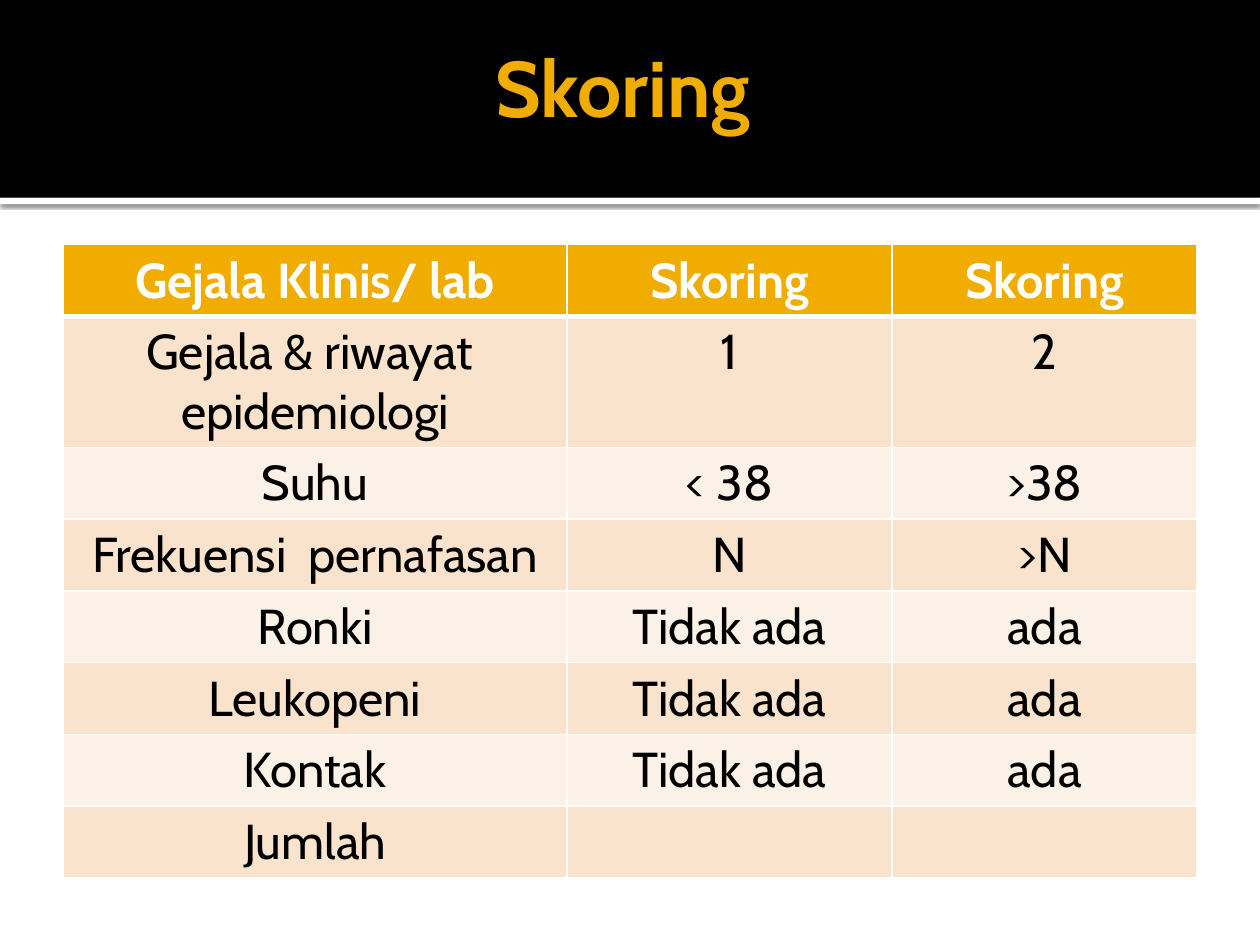
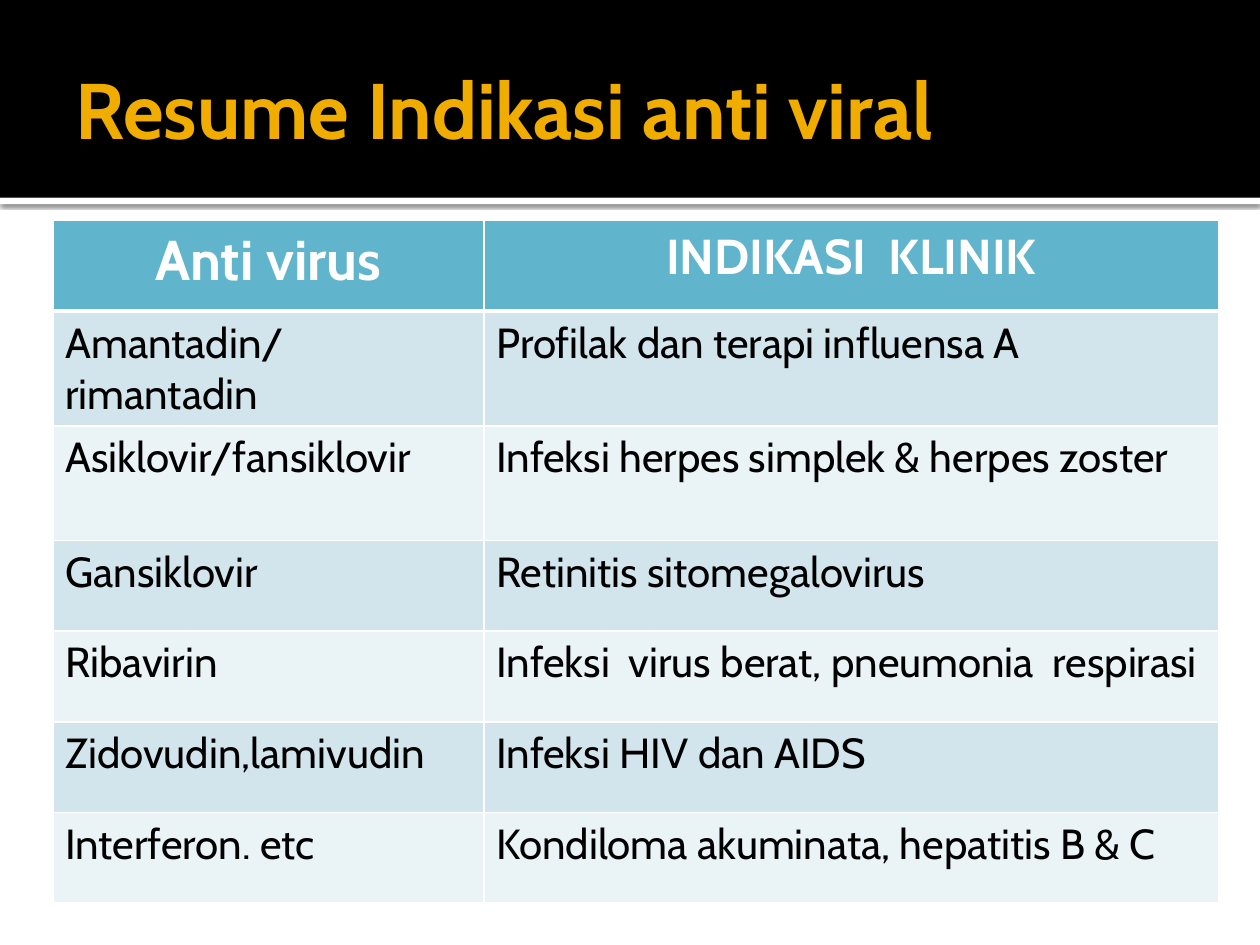
from lxml import etree
from pptx import Presentation
from pptx.dml.color import RGBColor
from pptx.enum import shapes, text
from pptx.oxml import parse_xml
from pptx.oxml.ns import nsdecls, qn
from pptx.util import Inches, Pt

FONT = "Cabin"
WHITE, BLACK, GOLD = "FFFFFF", "000000", "F0AD00"
ORANGE_STYLE = (GOLD, "F9E3CC", "FCF1E7")  # header, odd rows, even rows
BLUE_STYLE = ("60B5CC", "D2E5EC", "EAF3F6")
LEFT, CENTER = text.PP_ALIGN.LEFT, text.PP_ALIGN.CENTER

SCORING = [
    ("Gejala Klinis/ lab", "Skoring", "Skoring"),
    ("Gejala & riwayat  epidemiologi", "1", "2"),
    ("Suhu", "< 38", ">38"),
    ("Frekuensi  pernafasan", "N", ">N"),
    ("Ronki", "Tidak ada", "ada"),
    ("Leukopeni", "Tidak ada", "ada"),
    ("Kontak", "Tidak ada", "ada"),
    ("Jumlah", "", ""),
]
ANTIVIRALS = [
    ("Anti virus", "INDIKASI  KLINIK"),
    ("Amantadin/rimantadin", "Profilak dan terapi influensa A"),
    ("Asiklovir/fansiklovir", "Infeksi herpes simplek & herpes zoster"),
    ("Gansiklovir", "Retinitis sitomegalovirus"),
    ("Ribavirin", "Infeksi  virus berat, pneumonia  respirasi"),
    ("Zidovudin,lamivudin", "Infeksi HIV dan AIDS"),
    ("Interferon. etc", "Kondiloma akuminata, hepatitis B & C"),
]


def rgb(value):
    return RGBColor.from_string(value)


def inches(box):
    return [Inches(v) for v in box]


def add_run(p, words, size, color, bold=False):
    r = p.add_run()
    r.text = words
    r.font.name = FONT
    r.font.size = Pt(size)
    r.font.bold = bold
    r.font.color.rgb = rgb(color)


def add_rect(s, box, color):
    sp = s.shapes.add_shape(shapes.MSO_SHAPE.RECTANGLE, *inches(box))
    sp.shadow.inherit = False
    sp.fill.solid()
    sp.fill.fore_color.rgb = rgb(color)
    sp.line.fill.background()
    return sp


def add_header_band(s, box):
    """Black band with a thin white strip under it that casts a shadow."""
    left, top, width, height = box
    strip = add_rect(s, (left, top + height, width, 0.05), WHITE)
    effects = strip._element.spPr.find(qn("a:effectLst"))
    effects.append(parse_xml(
        f'<a:outerShdw {nsdecls("a")} blurRad="{Pt(2.5)}" dist="{Pt(0.8)}" '
        f'dir="5400000" algn="t" rotWithShape="0"><a:srgbClr val="{BLACK}">'
        '<a:alpha val="60000"/></a:srgbClr></a:outerShdw>'))
    add_rect(s, box, BLACK)


def add_title(s, box, words, align):
    tf = s.shapes.add_textbox(*inches(box)).text_frame
    tf.word_wrap = True
    tf.vertical_anchor = text.MSO_ANCHOR.MIDDLE
    tf.margin_left = Inches(0.1)
    tf.margin_right = tf.margin_top = tf.margin_bottom = Inches(0.05)
    p = tf.paragraphs[0]
    p.alignment = align
    add_run(p, words, 45, GOLD, True)


def set_borders(cell, top, bottom):
    """White cell borders; the side lines are always 1 pt wide."""
    tcPr = cell._tc.get_or_add_tcPr()
    widths = {"lnL": 1, "lnR": 1, "lnT": top, "lnB": bottom}
    for i, (side, width) in enumerate(widths.items()):
        ln = etree.Element(qn(f"a:{side}"), w=str(Pt(width)))
        fill = etree.SubElement(ln, qn("a:solidFill"))
        etree.SubElement(fill, qn("a:srgbClr"), val=WHITE)
        tcPr.insert(i, ln)


def add_grid(s, box, data, col_widths, row_heights, style, head_sizes, size, align):
    frame = s.shapes.add_table(len(data), len(col_widths), *inches(box))
    table = frame.table
    for col, width in zip(table.columns, col_widths):
        col.width = Inches(width)
    for row, height in zip(table.rows, row_heights):
        row.height = Inches(height)

    header, odd, even = style
    for i, line in enumerate(data):
        is_head = i == 0
        color = header if is_head else odd if i % 2 else even
        for j, words in enumerate(line):
            cell = table.cell(i, j)
            cell.fill.solid()
            cell.fill.fore_color.rgb = rgb(color)
            set_borders(cell, 3 if i == 1 else 1, 3 if is_head else 1)
            p = cell.text_frame.paragraphs[0]
            p.alignment = CENTER if is_head else align
            if words:
                add_run(p, words, head_sizes[j] if is_head else size,
                        WHITE if is_head else BLACK, is_head)


def add_slide(prs, title, title_box, title_align):
    s = prs.slides.add_slide(prs.slide_layouts[6])
    add_header_band(s, (0, 0, 10, 1.57))
    add_title(s, title_box, title, title_align)
    return s


def scoring_slide(prs):
    s = add_slide(prs, "Skoring", (0.42, 0, 9, 1.37), CENTER)
    heights = [0.57, 1.04] + [0.57] * 6
    add_grid(s, (0.5, 1.94, 9, sum(heights)), SCORING, (4, 2.58, 2.42), heights,
             ORANGE_STYLE, (28, 28, 28), 28, CENTER)


def antiviral_slide(prs):
    s = add_slide(prs, "Resume Indikasi anti viral", (0.5, 0.17, 9, 1.37), LEFT)
    heights = [0.72] + [0.91] * 2 + [0.72] * 4
    add_grid(s, (0.42, 1.75, 9.25, sum(heights)), ANTIVIRALS, (3.42, 5.83), heights,
             BLUE_STYLE, (32, 28), 24, LEFT)


def main():
    prs = Presentation()
    prs.slide_width, prs.slide_height = Inches(10), Inches(7.5)
    scoring_slide(prs)
    antiviral_slide(prs)
    prs.save("out.pptx")


if __name__ == "__main__":
    main()
